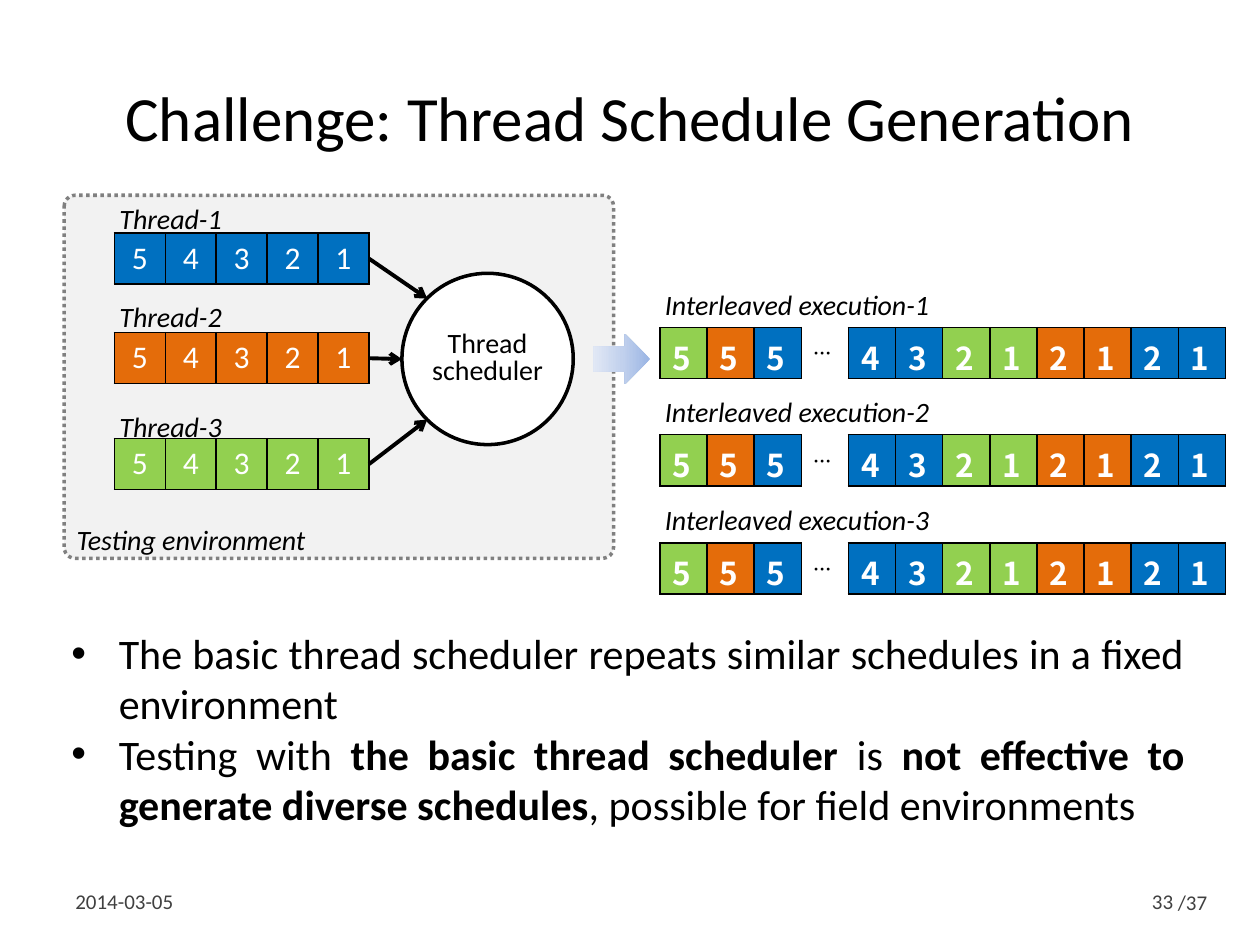
from dataclasses import dataclass

from lxml import etree
from pptx import Presentation
from pptx.dml.color import RGBColor
from pptx.enum.dml import MSO_LINE
from pptx.enum.shapes import MSO_CONNECTOR, MSO_SHAPE
from pptx.enum.text import MSO_ANCHOR, PP_ALIGN
from pptx.oxml.ns import qn
from pptx.util import Pt

LEFT, CENTER, RIGHT, JUSTIFY = PP_ALIGN.LEFT, PP_ALIGN.CENTER, PP_ALIGN.RIGHT, PP_ALIGN.JUSTIFY
TOP, MIDDLE = MSO_ANCHOR.TOP, MSO_ANCHOR.MIDDLE
ROUND_RECT, OVAL, RIGHT_ARROW = MSO_SHAPE.ROUNDED_RECTANGLE, MSO_SHAPE.OVAL, MSO_SHAPE.RIGHT_ARROW
STRAIGHT, ROUND_DOT = MSO_CONNECTOR.STRAIGHT, MSO_LINE.ROUND_DOT

BLACK = RGBColor(0x00, 0x00, 0x00)
WHITE = RGBColor(0xFF, 0xFF, 0xFF)
FOOTER_GRAY = RGBColor(0x40, 0x40, 0x40)
OUTLINE_GRAY = RGBColor(0x80, 0x80, 0x80)
PANEL_GRAY = RGBColor(0xF2, 0xF2, 0xF2)
BLUE = RGBColor(0x00, 0x70, 0xC0)
ORANGE = RGBColor(0xE4, 0x6C, 0x0A)
GREEN = RGBColor(0x92, 0xD0, 0x50)
FLOW_STOPS = ((0, RGBColor(0x9A, 0xB5, 0xE4)), (50, RGBColor(0xC2, 0xD1, 0xED)),
              (100, RGBColor(0xE1, 0xE8, 0xF5)))

BODY_FONT, STEP_FONT = "Calibri", "Noto Sans CJK KR"
ROW_HEIGHT = 29.2
THREAD_LEFT, THREAD_STEP_WIDTH = 65.4, 29.1
EXECUTION_LEFT, EXECUTION_STEP_WIDTH = 377.1, 26.95


@dataclass(frozen=True)
class Style:
    size: float
    color: RGBColor = BLACK
    font: str = BODY_FONT
    bold: bool = False
    italic: bool = False


@dataclass(frozen=True)
class Step:
    label: str
    fill: RGBColor


@dataclass(frozen=True)
class Thread:
    name: str
    label_top: float
    top: float
    color: RGBColor
    arrow_end: tuple[float, float]


@dataclass(frozen=True)
class Execution:
    name: str
    label_top: float
    top: float
    bottom_margin: float


TITLE = Style(36)
BODY = Style(24)
STRONG = Style(24, bold=True)
LABEL = Style(16, italic=True)
SCHEDULER = Style(16)
FOOTER = Style(12, FOOTER_GRAY)
THREAD_STEP = Style(18, WHITE)
EXECUTION_STEP = Style(18, WHITE, STEP_FONT, bold=True)
GAP_STEP = Style(18, BLACK, STEP_FONT, bold=True)

THREADS = (
    Thread("Thread-1", 111.6, 133.2, BLUE, (244.1, 170.6)),
    Thread("Thread-2", 167.8, 190.1, ORANGE, (229.7, 205.2)),
    Thread("Thread-3", 230.4, 250.6, GREEN, (244.1, 239.8)),
)
EXECUTIONS = (
    Execution("Interleaved execution-1", 160.6, 187.2, 3.6),
    Execution("Interleaved execution-2", 221.8, 248.4, 0),
    Execution("Interleaved execution-3", 283.7, 310.3, 0),
)
SCHEDULE = tuple(Step(label, fill) for label, fill in zip(
    "555…43212121",
    (GREEN, ORANGE, BLUE, WHITE, BLUE, BLUE, GREEN, GREEN, ORANGE, ORANGE, BLUE, BLUE)))
BULLETS = (
    (("The basic thread scheduler repeats similar schedules in a fixed environment", BODY),),
    (("Testing with ", BODY), ("the basic thread scheduler", STRONG), (" is ", BODY),
     ("not effective to generate diverse schedules", STRONG),
     (", possible for field environments", BODY)),
)


def add_run(paragraph, text: str, style: Style):
    """Append one styled run to a paragraph."""
    run = paragraph.add_run()
    run.text = text
    font = run.font
    font.name, font.size, font.bold, font.italic = style.font, Pt(style.size), style.bold, style.italic
    font.color.rgb = style.color
    return run


def add_text(slide, box, text: str, style: Style, align=LEFT, anchor=TOP, inset: float = 7.2) -> None:
    """Place one line of text in a box of left, top, width and height."""
    frame = slide.shapes.add_textbox(*map(Pt, box)).text_frame
    frame.word_wrap = True
    frame.vertical_anchor = anchor
    frame.margin_left = Pt(inset)
    frame.paragraphs[0].alignment = align
    add_run(frame.paragraphs[0], text, style)


def add_bullets(slide, box) -> None:
    """Place the justified conclusions with hanging bullets."""
    frame = slide.shapes.add_textbox(*map(Pt, box)).text_frame
    frame.word_wrap = True
    for index, runs in enumerate(BULLETS):
        paragraph = frame.add_paragraph() if index else frame.paragraphs[0]
        paragraph.alignment = JUSTIFY
        properties = paragraph._p.get_or_add_pPr()
        properties.set("marL", str(Pt(27)))
        properties.set("indent", str(-Pt(27)))
        etree.SubElement(properties, qn("a:buFont"), typeface="Arial")
        etree.SubElement(properties, qn("a:buChar"), char="•")
        for text, style in runs:
            add_run(paragraph, text, style)


def add_shape(slide, kind, box):
    """Add a preset shape without a shadow."""
    shape = slide.shapes.add_shape(kind, *map(Pt, box))
    shape.shadow.inherit = False
    return shape


def add_outlined(slide, kind, box, fill: RGBColor, line: RGBColor):
    """Add a filled shape with a two point outline."""
    shape = add_shape(slide, kind, box)
    shape.fill.solid()
    shape.fill.fore_color.rgb = fill
    shape.line.color.rgb = line
    shape.line.width = Pt(2)
    return shape


def add_environment(slide) -> None:
    """Draw the dotted panel of the testing environment."""
    panel = add_outlined(slide, ROUND_RECT, (36.7, 111.6, 313.9, 207.4), PANEL_GRAY, OUTLINE_GRAY)
    panel.adjustments[0] = 0.03
    panel.line.dash_style = ROUND_DOT


def add_scheduler(slide) -> None:
    """Draw the circle of the thread scheduler."""
    frame = add_outlined(slide, OVAL, (229.7, 156.2, 97.9, 97.9), WHITE, BLACK).text_frame
    frame.margin_left = frame.margin_right = frame.margin_top = frame.margin_bottom = 0
    frame.vertical_anchor = MIDDLE
    for index, word in enumerate(("Thread", "scheduler")):
        paragraph = frame.add_paragraph() if index else frame.paragraphs[0]
        paragraph.alignment = CENTER
        paragraph.line_spacing = 0.8
        add_run(paragraph, word, SCHEDULER)


def add_flow(slide) -> None:
    """Draw the gradient arrow from the environment to the executions."""
    arrow = add_shape(slide, RIGHT_ARROW, (339.1, 190.8, 32.4, 28.8))
    arrow.line.fill.background()
    arrow.fill.gradient()
    arrow.fill.gradient_angle = 180
    stops = arrow._element.spPr.find(qn("a:gradFill")).find(qn("a:gsLst"))
    stops.clear()
    for position, color in FLOW_STOPS:
        stop = etree.SubElement(stops, qn("a:gs"), pos=str(position * 1000))
        etree.SubElement(stop, qn("a:srgbClr"), val=str(color))


def add_arrow(slide, start: tuple[float, float], end: tuple[float, float]) -> None:
    """Draw a black line with an open arrowhead."""
    arrow = slide.shapes.add_connector(STRAIGHT, *map(Pt, start + end))
    arrow.line.color.rgb = BLACK
    arrow.line.width = Pt(2.25)
    etree.SubElement(arrow.line._get_or_add_ln(), qn("a:tailEnd"), type="arrow")
    etree.SubElement(arrow._element.spPr, qn("a:effectLst"))


def set_borders(cell, visible: str) -> None:
    """Draw the named sides of a cell in black and hide the others."""
    properties = cell._tc.get_or_add_tcPr()
    for side in "LRTB":
        line = etree.SubElement(properties, qn(f"a:ln{side}"), w=str(Pt(1)))
        if side in visible:
            fill = etree.SubElement(line, qn("a:solidFill"))
            etree.SubElement(fill, qn("a:srgbClr"), val=str(BLACK))
        else:
            etree.SubElement(line, qn("a:noFill"))


def add_steps(slide, left: float, top: float, width: float, steps, style: Style,
              align=LEFT, bottom_margin: float = 3.6) -> None:
    """Draw a one-row table of coloured steps."""
    table = slide.shapes.add_table(
        1, len(steps), Pt(left), Pt(top), Pt(width * len(steps)), Pt(ROW_HEIGHT)).table
    table.first_row = table.horz_banding = False
    for column, step in enumerate(steps):
        is_gap = step.label == "…"
        table.columns[column].width = Pt(width)
        cell = table.cell(0, column)
        set_borders(cell, "LR" if is_gap else "LRTB")
        cell.fill.solid()
        cell.fill.fore_color.rgb = step.fill
        cell.margin_bottom = Pt(bottom_margin)
        cell.vertical_anchor = MIDDLE if is_gap else TOP
        paragraph = cell.text_frame.paragraphs[0]
        paragraph.alignment = align
        run = add_run(paragraph, step.label, GAP_STEP if is_gap else style)
        if is_gap:
            run.font._element.set("baseline", "30000")


def main() -> None:
    """Build and save the slide."""
    deck = Presentation()
    deck.slide_width, deck.slide_height = Pt(720), Pt(540)
    slide = deck.slides.add_slide(deck.slide_layouts[6])
    add_environment(slide)
    add_text(slide, (3.6, 21.6, 712.8, 90), "Challenge: Thread Schedule Generation", TITLE, CENTER, MIDDLE)
    add_bullets(slide, (33.8, 355, 650.2, 124.6))
    add_scheduler(slide)
    for thread in THREADS:
        steps = [Step(label, thread.color) for label in "54321"]
        add_steps(slide, THREAD_LEFT, thread.top, THREAD_STEP_WIDTH, steps, THREAD_STEP, CENTER)
        start = (THREAD_LEFT + THREAD_STEP_WIDTH * len(steps), thread.top + ROW_HEIGHT / 2)
        add_arrow(slide, start, thread.arrow_end)
        add_text(slide, (THREAD_LEFT, thread.label_top, 96.5, 26.6), thread.name, LABEL, inset=2.9)
    add_flow(slide)
    for execution in EXECUTIONS:
        add_steps(slide, EXECUTION_LEFT, execution.top, EXECUTION_STEP_WIDTH, SCHEDULE,
                  EXECUTION_STEP, bottom_margin=execution.bottom_margin)
        add_text(slide, (EXECUTION_LEFT, execution.label_top, 226.8, 26.6), execution.name, LABEL, inset=2.9)
    add_text(slide, (36.7, 295.2, 190.1, 26.6), "Testing environment", LABEL)
    add_text(slide, (36, 500.4, 74.9, 28.8), "2014-03-05", FOOTER, anchor=MIDDLE)
    add_text(slide, (643.7, 500.4, 33.8, 28.8), "33", FOOTER, RIGHT, MIDDLE)
    add_text(slide, (666, 504.7, 45.4, 21.6), "/37", FOOTER)
    deck.save("out.pptx")


if __name__ == "__main__":
    main()
